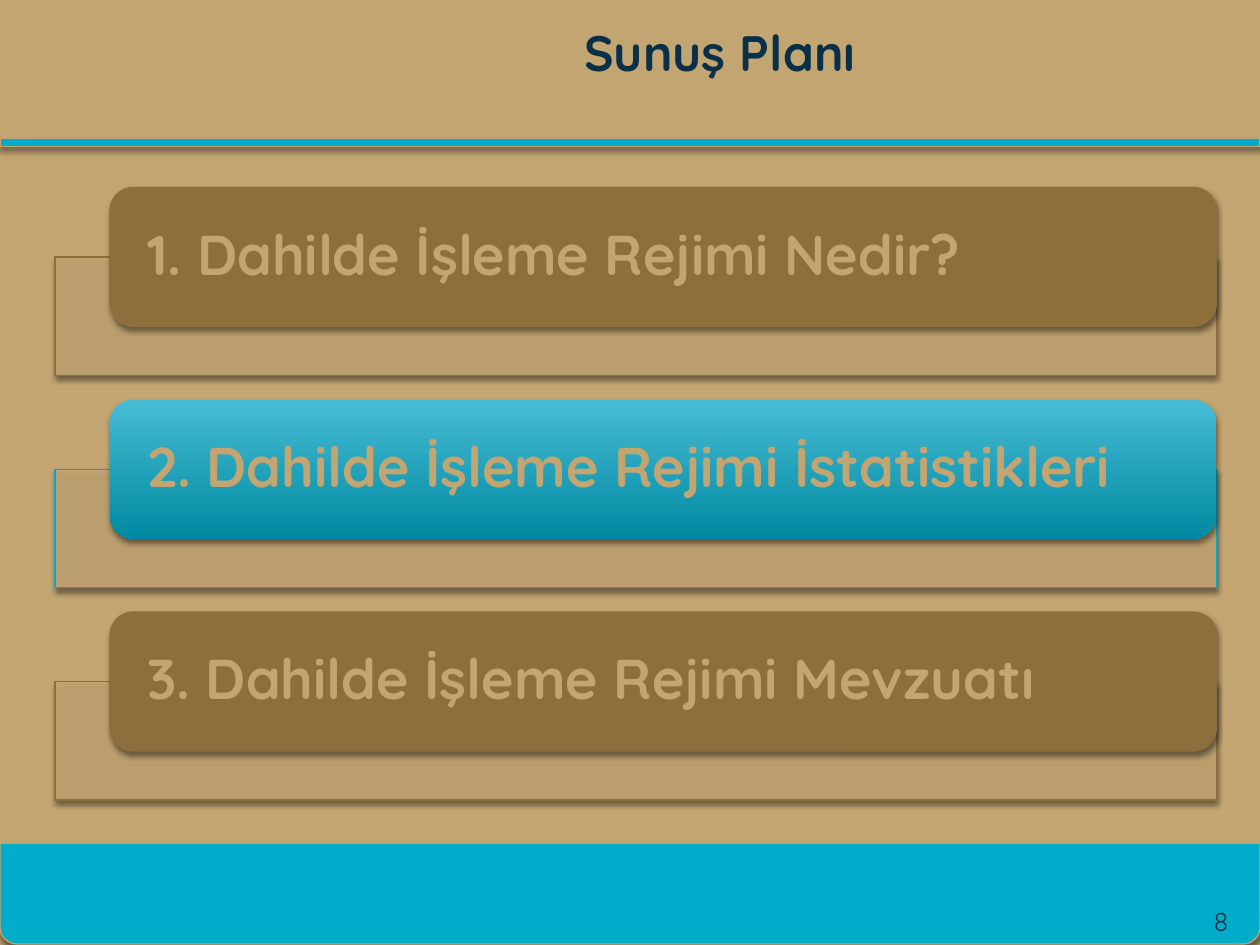
from lxml import etree
from pptx import Presentation
from pptx.dml.color import RGBColor
from pptx.enum.shapes import MSO_SHAPE
from pptx.enum.text import MSO_ANCHOR, PP_ALIGN
from pptx.oxml.ns import qn
from pptx.util import Cm, Pt

RECT = MSO_SHAPE.RECTANGLE
ROUNDED = MSO_SHAPE.ROUNDED_RECTANGLE
ROUNDED_PAIR = MSO_SHAPE.ROUND_2_SAME_RECTANGLE
MIDDLE = MSO_ANCHOR.MIDDLE
LEFT, CENTER = PP_ALIGN.LEFT, PP_ALIGN.CENTER

FONT = "Quicksand"
SAND, BROWN, TEAL, NAVY = "C3A572", "8D6F3C", "00ACC9", "083048"
HIGHLIGHT = ("47BBD5", "008AA1")

TITLE = "Sunuş Planı"
PAGE_NUMBER = "8"
TOPICS = [
    "1. Dahilde İşleme Rejimi Nedir?",
    "2. Dahilde İşleme Rejimi İstatistikleri",
    "3. Dahilde İşleme Rejimi Mevzuatı",
]
CURRENT_TOPIC = 1

WIDTH, HEIGHT = 25.4, 19.05
CARD_TOP, PITCH = 3.78, 4.28
FRAME_DROP = 1.4


def rgb(value):
    return RGBColor.from_string(value)


def add_shadow(shape):
    shape.shadow.inherit = False
    effects = shape._element.spPr.find(qn("a:effectLst"))
    shadow = etree.SubElement(effects, qn("a:outerShdw"), blurRad=str(Pt(3)),
                              dist=str(Pt(2)), dir="5400000", rotWithShape="0")
    color = etree.SubElement(shadow, qn("a:srgbClr"), val="000000")
    etree.SubElement(color, qn("a:alpha"), val="45000")


def add_panel(page, kind, left, top, width, height, fill, line):
    """Add a shadowed shape; a pair of fill colours makes a vertical gradient."""
    shape = page.shapes.add_shape(kind, Cm(left), Cm(top), Cm(width), Cm(height))
    if isinstance(fill, tuple):
        shape.fill.gradient()
        shape.fill.gradient_angle = 270
        for stop, color in zip(shape.fill.gradient_stops, fill):
            stop.color.rgb = rgb(color)
    else:
        shape.fill.solid()
        shape.fill.fore_color.rgb = rgb(fill)
    if line:
        shape.line.color.rgb = rgb(line)
        shape.line.width = Pt(0.75)
    else:
        shape.line.fill.background()
    add_shadow(shape)
    return shape


def write(shape, text, size, color, bold=False, align=CENTER, inset=0):
    frame = shape.text_frame
    frame.word_wrap = True
    frame.vertical_anchor = MIDDLE
    frame.margin_left = frame.margin_right = Cm(inset)
    frame.margin_top = frame.margin_bottom = 0
    paragraph = frame.paragraphs[0]
    paragraph.text = text
    paragraph.alignment = align
    font = paragraph.font
    font.name, font.size, font.bold = FONT, Pt(size), bold
    font.color.rgb = rgb(color)
    return paragraph


def add_topic(page, index, topic):
    top = CARD_TOP + index * PITCH
    current = index == CURRENT_TOPIC
    frame = add_panel(page, RECT, 1.11, top + FRAME_DROP, 23.42, 2.39,
                      SAND, TEAL if current else BROWN)
    color = frame._element.spPr.find(qn("a:solidFill"))[0]
    etree.SubElement(color, qn("a:alpha"), val="90000")
    card = add_panel(page, ROUNDED, 2.22, top, 22.3, 2.8,
                     HIGHLIGHT if current else BROWN, None if current else BROWN)
    paragraph = write(card, topic, 32, SAND, bold=True, align=LEFT, inset=0.61)
    paragraph.line_spacing = 0.9


def main():
    deck = Presentation()
    deck.slide_width, deck.slide_height = Cm(WIDTH), Cm(HEIGHT)
    page = deck.slides.add_slide(deck.slide_layouts[6])
    page.background.fill.solid()
    page.background.fill.fore_color.rgb = rgb(SAND)

    footer = add_panel(page, ROUNDED_PAIR, 0, 17, WIDTH, 2.03, TEAL, SAND)
    footer.rotation = 180
    add_panel(page, RECT, 0, 2.8, WIDTH, 0.15, TEAL, SAND)

    title = page.shapes.add_textbox(Cm(3.63), Cm(0.38), Cm(21.77), Cm(1.32))
    write(title, TITLE, 28.4, NAVY, bold=True)
    number = page.shapes.add_textbox(Cm(23.83), Cm(18.21), Cm(1.57), Cm(0.71))
    write(number, PAGE_NUMBER, 15, NAVY)

    for index, topic in enumerate(TOPICS):
        add_topic(page, index, topic)
    deck.save("out.pptx")


if __name__ == "__main__":
    main()
